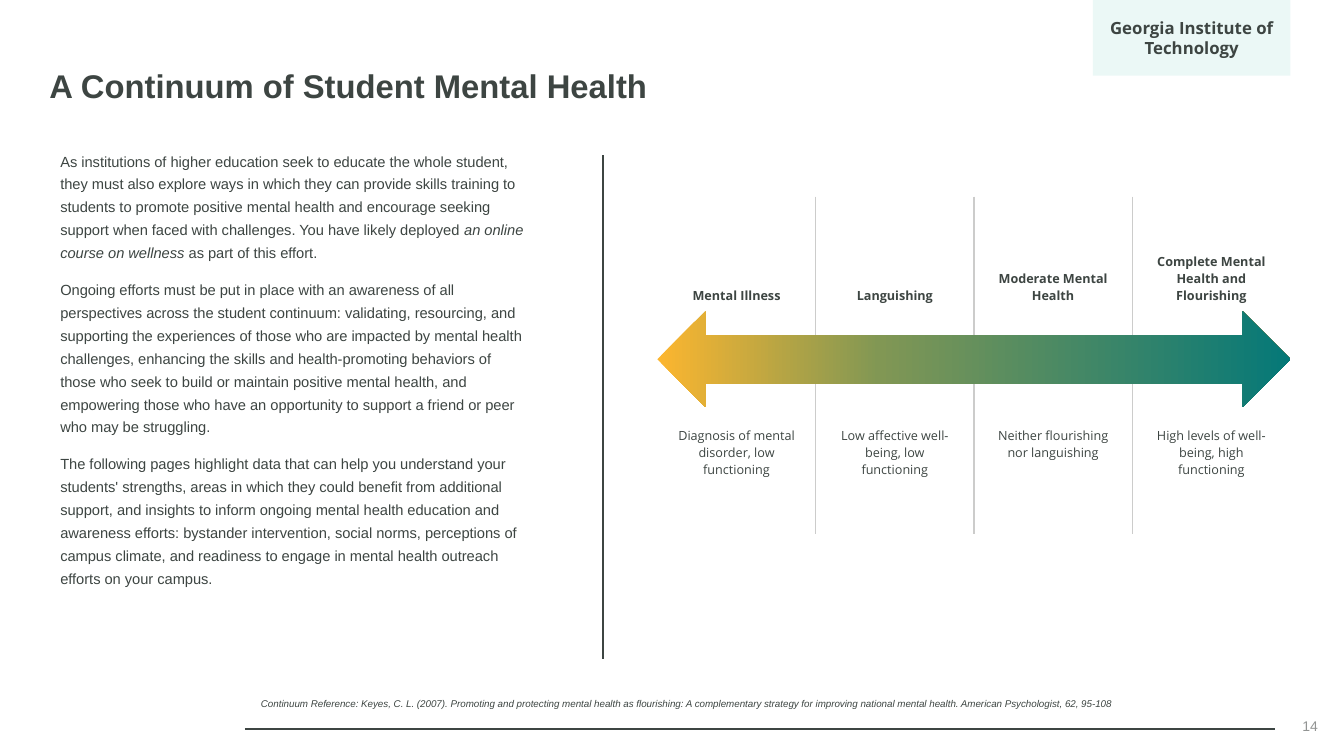
from copy import deepcopy

from lxml.etree import SubElement
from pptx import Presentation
from pptx.dml.color import RGBColor
from pptx.enum.shapes import MSO_CONNECTOR, MSO_SHAPE
from pptx.enum.text import MSO_ANCHOR, PP_ALIGN
from pptx.oxml.ns import qn
from pptx.util import Emu, Pt

EMU_PER_PX = 9144
INK = "3D4542"
GRID = "CCCCCB"
PLAIN_TABLE_STYLE = "{2D5ABB26-0587-4C30-8999-92F81FD0307C}"

BODY = [
    [
        ("As institutions of higher education seek to educate the whole student, they must also "
         "explore ways in which they can provide skills training to students to promote positive "
         "mental health and encourage seeking support when faced with challenges. You have likely "
         "deployed ", False),
        ("an online course on wellness", True),
        (" as part of this effort.", False),
    ],
    [
        ("Ongoing efforts must be put in place with an awareness of all perspectives across the "
         "student continuum: validating, resourcing, and supporting the experiences of those who "
         "are impacted by mental health challenges, enhancing the skills and health-promoting "
         "behaviors of those who seek to build or maintain positive mental health, and empowering "
         "those who have an opportunity to support a friend or peer who may be struggling.", False),
    ],
    [
        ("The following pages highlight data that can help you understand your students' strengths, "
         "areas in which they could benefit from additional support, and insights to inform ongoing "
         "mental health education and awareness efforts: bystander intervention, social norms, "
         "perceptions of campus climate, and readiness to engage in mental health outreach efforts "
         "on your campus.", False),
    ],
]
STAGES = [
    ("Mental Illness", "Diagnosis of mental disorder, low functioning"),
    ("Languishing", "Low affective well-being, low functioning"),
    ("Moderate Mental Health", "Neither flourishing nor languishing"),
    ("Complete Mental Health and Flourishing", "High levels of well-being, high functioning"),
]
REFERENCE = (
    "Continuum Reference: Keyes, C. L. (2007). Promoting and protecting mental health as "
    "flourishing: A complementary strategy for improving national mental health. "
    "American Psychologist, 62, 95-108"
)


def px(length):
    return Emu(length * EMU_PER_PX)


def box(*lengths):
    return [px(length) for length in lengths]


def color(hex_string):
    return RGBColor.from_string(hex_string)


def format_runs(paragraph, size, name="Arial", hex_string=INK, bold=False):
    for run in paragraph.runs:
        run.font.size = Pt(size)
        run.font.name = name
        run.font.bold = bold
        run.font.color.rgb = color(hex_string)


def set_title(slide, text):
    title = slide.shapes.title
    title.left, title.top, title.width, title.height = box(39, 52, 1183, 70)
    title.text_frame.text = text
    title.text_frame.vertical_anchor = MSO_ANCHOR.MIDDLE
    paragraph = title.text_frame.paragraphs[0]
    paragraph.alignment = PP_ALIGN.LEFT
    paragraph.line_spacing = 0.9
    format_runs(paragraph, 23.4, bold=True)


def add_text_frame(slide, bounds, anchor):
    text_frame = slide.shapes.add_textbox(*box(*bounds)).text_frame
    text_frame.word_wrap = True
    text_frame.vertical_anchor = anchor
    return text_frame


def add_body(slide, bounds):
    text_frame = add_text_frame(slide, bounds, MSO_ANCHOR.TOP)
    for index, parts in enumerate(BODY):
        paragraph = text_frame.add_paragraph() if index else text_frame.paragraphs[0]
        paragraph.line_spacing = 1.3
        if index:
            paragraph.space_before = Pt(10)
        for text, italic in parts:
            run = paragraph.add_run()
            run.text = text
            run.font.italic = italic
        format_runs(paragraph, 10.5)


def add_label(slide, bounds, text, size, hex_string=INK):
    text_frame = add_text_frame(slide, bounds, MSO_ANCHOR.MIDDLE)
    text_frame.text = text
    paragraph = text_frame.paragraphs[0]
    format_runs(paragraph, size, hex_string=hex_string)
    return paragraph


def add_line(slide, ends, width, hex_string=INK):
    line = slide.shapes.add_connector(MSO_CONNECTOR.STRAIGHT, *box(*ends))
    line.line.width = Pt(width)
    line.line.color.rgb = color(hex_string)
    SubElement(line._element.spPr, qn("a:effectLst"))


def add_shape(slide, preset, bounds):
    shape = slide.shapes.add_shape(preset, *box(*bounds))
    shape.shadow.inherit = False
    shape.line.fill.background()
    return shape


def add_cell_border(cell, tag):
    properties = cell._tc.get_or_add_tcPr()
    border = properties.makeelement(qn(tag), {"w": str(Pt(1))})
    solid = SubElement(border, qn("a:solidFill"))
    SubElement(solid, qn("a:srgbClr"), val=GRID)
    properties.insert(0, border)


def fill_cell(cell, text, anchor, bold):
    cell.vertical_anchor = anchor
    cell.margin_left = cell.margin_right = px(19)
    cell.text_frame.text = text
    paragraph = cell.text_frame.paragraphs[0]
    paragraph.alignment = PP_ALIGN.CENTER
    format_runs(paragraph, 9, "Open Sans", bold=bold)


def add_stage_table(slide, bounds):
    frame = slide.shapes.add_table(3, len(STAGES), *box(*bounds))
    table = frame.table
    table.first_row = table.horz_banding = False
    table._tbl.tblPr.find(qn("a:tableStyleId")).text = PLAIN_TABLE_STYLE
    for column, (heading, description) in enumerate(STAGES):
        fill_cell(table.cell(0, column), heading, MSO_ANCHOR.BOTTOM, True)
        fill_cell(table.cell(2, column), description, MSO_ANCHOR.TOP, False)
        for row in range(3):
            cell = table.cell(row, column)
            cell.fill.background()
            if column < len(STAGES) - 1:
                add_cell_border(cell, "a:lnR")
            if column:
                add_cell_border(cell, "a:lnL")


def add_continuum_arrow(slide, bounds, stops):
    arrow = add_shape(slide, MSO_SHAPE.LEFT_RIGHT_ARROW, bounds)
    arrow.fill.gradient()
    arrow.fill.gradient_angle = 0
    stop_list = arrow._element.spPr.find(qn("a:gradFill")).find(qn("a:gsLst"))
    while len(stop_list) < len(stops):
        stop_list.append(deepcopy(stop_list[0]))
    for stop, (position, hex_string) in zip(arrow.fill.gradient_stops, stops):
        stop.position = position
        stop.color.rgb = color(hex_string)


def add_institution_tag(slide, bounds, text):
    tag = add_shape(slide, MSO_SHAPE.RECTANGLE, bounds)
    tag.fill.solid()
    tag.fill.fore_color.rgb = color("3CC0AF")
    fill = tag._element.spPr.find(qn("a:solidFill"))
    SubElement(fill[0], qn("a:alpha"), val="10000")
    text_frame = tag.text_frame
    text_frame.word_wrap = True
    text_frame.margin_top = text_frame.margin_bottom = 0
    text_frame.vertical_anchor = MSO_ANCHOR.MIDDLE
    text_frame.text = text
    paragraph = text_frame.paragraphs[0]
    paragraph.alignment = PP_ALIGN.CENTER
    format_runs(paragraph, 12, "Open Sans", bold=True)


def main():
    presentation = Presentation()
    presentation.slide_width, presentation.slide_height = box(1333, 750)
    slide = presentation.slides.add_slide(presentation.slide_layouts[5])
    add_line(slide, (243, 723, 1265, 723), 1.5, "3D4543")
    page_number = add_label(slide, (1017, 700, 300, 40), "14", 10, "929493")
    page_number.alignment = PP_ALIGN.RIGHT
    set_title(slide, "A Continuum of Student Mental Health")
    add_body(slide, (50, 141, 484, 521))
    add_line(slide, (598, 154, 598, 654), 1)
    add_stage_table(slide, (652, 195, 628, 335))
    add_continuum_arrow(slide, (652, 309, 628, 95),
                        [(0, "FCB62F"), (0.35, "819754"), (1, "057878")])
    reference = add_label(slide, (249, 676, 1017, 39), REFERENCE, 7)
    reference.line_spacing = Pt(12)
    reference.runs[0].font.italic = True
    add_institution_tag(slide, (1084, 0, 196, 75), "Georgia Institute of Technology")
    presentation.save("out.pptx")


if __name__ == "__main__":
    main()
